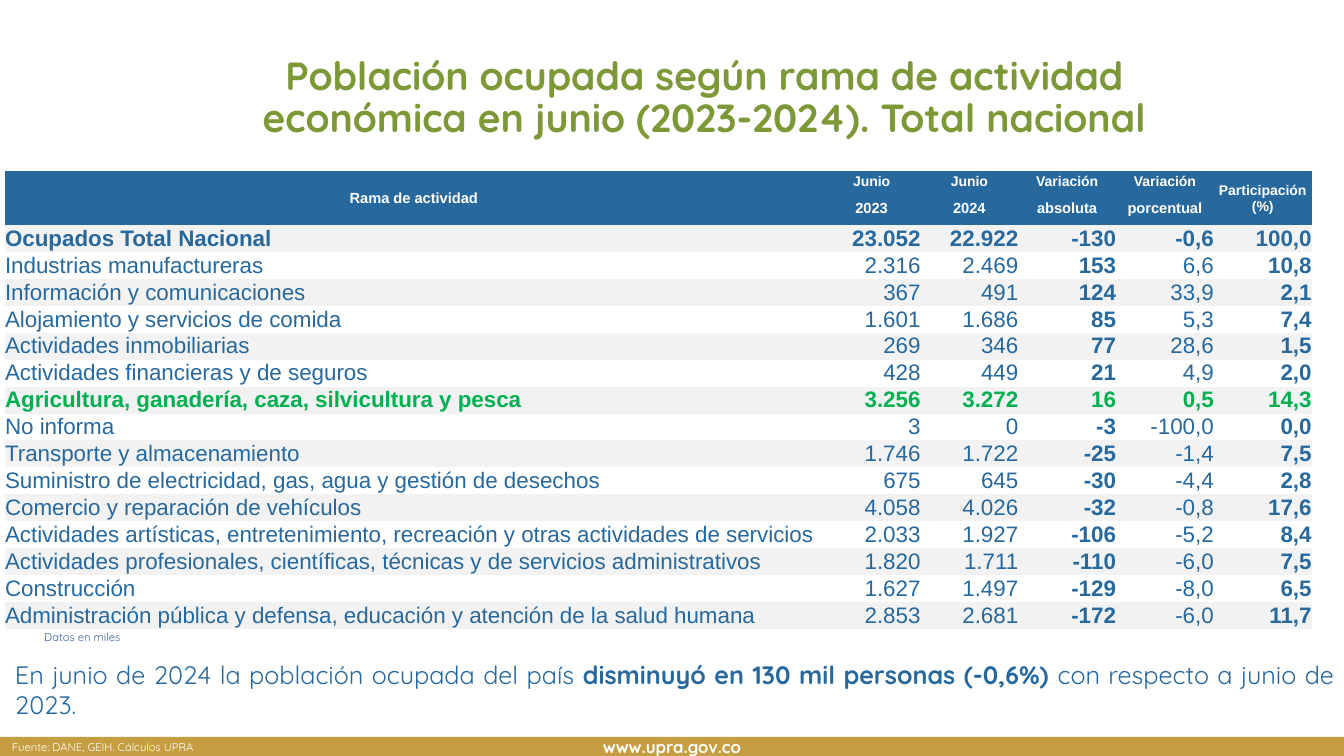
from pptx import Presentation
from pptx.dml.color import RGBColor
from pptx.enum.shapes import MSO_SHAPE
from pptx.enum.text import MSO_ANCHOR, PP_ALIGN
from pptx.util import Inches, Pt

BLUE = RGBColor(0x27, 0x68, 0x9D)
NAVY = RGBColor(0x39, 0x5F, 0x9B)
OLIVE = RGBColor(0x7D, 0x98, 0x37)
GREEN = RGBColor(0x00, 0xB0, 0x50)
GOLD = RGBColor(0xC5, 0x9E, 0x41)
GRAY = RGBColor(0xF2, 0xF2, 0xF2)
WHITE = RGBColor(0xFF, 0xFF, 0xFF)
PLAIN = "{2D5ABB26-0587-4C30-8999-92F81FD0307C}"

# Column heads: upper and lower row
HEADS = [
    ("Rama de actividad", None),
    ("Junio", "2023"),
    ("Junio", "2024"),
    ("Variación", "absoluta"),
    ("Variación", "porcentual"),
    ("Participación (%)", None),
]
TOTAL = "Ocupados Total Nacional"
FARM = "Agricultura, ganadería, caza, silvicultura y pesca"
ROWS = [
    (TOTAL, "23.052", "22.922", "-130", "-0,6", "100,0"),
    ("Industrias manufactureras", "2.316", "2.469", "153", "6,6", "10,8"),
    ("Información y comunicaciones", "367", "491", "124", "33,9", "2,1"),
    ("Alojamiento y servicios de comida", "1.601", "1.686", "85", "5,3", "7,4"),
    ("Actividades inmobiliarias", "269", "346", "77", "28,6", "1,5"),
    ("Actividades financieras y de seguros", "428", "449", "21", "4,9", "2,0"),
    (FARM, "3.256", "3.272", "16", "0,5", "14,3"),
    ("No informa", "3", "0", "-3", "-100,0", "0,0"),
    ("Transporte y almacenamiento", "1.746", "1.722", "-25", "-1,4", "7,5"),
    ("Suministro de electricidad, gas, agua y gestión de desechos",
     "675", "645", "-30", "-4,4", "2,8"),
    ("Comercio y reparación de vehículos",
     "4.058", "4.026", "-32", "-0,8", "17,6"),
    ("Actividades artísticas, entretenimiento, recreación y otras "
     "actividades de servicios", "2.033", "1.927", "-106", "-5,2", "8,4"),
    ("Actividades profesionales, científicas, técnicas y de servicios "
     "administrativos", "1.820", "1.711", "-110", "-6,0", "7,5"),
    ("Construcción", "1.627", "1.497", "-129", "-8,0", "6,5"),
    ("Administración pública y defensa, educación y atención de la salud "
     "humana", "2.853", "2.681", "-172", "-6,0", "11,7"),
]


class Deck:
    face = "Quicksand"
    grid = "Arial"

    def __init__(self):
        self.prs = Presentation()
        self.prs.slide_width = Inches(13.33)
        self.prs.slide_height = Inches(7.5)
        self.slide = self.prs.slides.add_slide(self.prs.slide_layouts[6])

    def style(self, para, size, color, align, bold=None, face=None):
        para.alignment = align
        font = para.font
        font.name = face or self.face
        font.size = Pt(size)
        font.color.rgb = color
        font.bold = bold

    def text(self, box, parts, size, color, align=PP_ALIGN.JUSTIFY):
        """Add a text box; parts are (text, bold) pairs."""
        shape = self.slide.shapes.add_textbox(*map(Inches, box))
        shape.text_frame.word_wrap = True
        para = shape.text_frame.paragraphs[0]
        for words, bold in parts:
            run = para.add_run()
            run.text = words
            run.font.bold = bold
        self.style(para, size, color, align)
        return para

    def bar(self, box, words, size, fill, color):
        shape = self.slide.shapes.add_shape(
            MSO_SHAPE.RECTANGLE, *map(Inches, box))
        shape.shadow.inherit = False
        shape.fill.solid()
        shape.fill.fore_color.rgb = fill
        shape.line.fill.background()
        frame = shape.text_frame
        frame.vertical_anchor = MSO_ANCHOR.MIDDLE
        frame.text = words
        self.style(frame.paragraphs[0], size, color, PP_ALIGN.CENTER, True)

    def cell(self, cell, words, size, color, align, bold, fill, inset=0):
        cell.vertical_anchor = MSO_ANCHOR.MIDDLE
        cell.margin_left = cell.margin_right = cell.margin_top = Inches(inset)
        cell.margin_bottom = 0
        if fill is None:
            cell.fill.background()
        else:
            cell.fill.solid()
            cell.fill.fore_color.rgb = fill
        cell.text = words
        self.style(cell.text_frame.paragraphs[0], size, color, align, bold,
                   self.grid)

    def table(self, box, widths, heights):
        table = self.slide.shapes.add_table(
            len(heights), len(widths), *map(Inches, box)).table
        table.first_row = table.horz_banding = False
        table._tbl.tblPr[0].text = PLAIN
        for col, width in zip(table.columns, widths):
            col.width = Inches(width)
        for row, height in zip(table.rows, heights):
            row.height = Inches(height)
        return table


def main():
    deck = Deck()

    # Footer bar and title
    deck.bar((0, 7.31, 13.33, 0.19), "www.upra.gov.co", 12, GOLD, WHITE)
    title = deck.text(
        (2.03, 0.51, 9.91, 1.19),
        [("Población ocupada según rama de actividad económica en junio "
          "(2023-2024). Total nacional", True)],
        28, OLIVE, PP_ALIGN.CENTER)
    title.line_spacing = 0.9

    # Message and notes
    deck.text(
        (0.05, 6.49, 13.28, 0.71),
        [("En junio de 2024 la población ocupada del país ", False),
         ("disminuyó en 130 mil personas (-0,6%) ", True),
         ("con respecto a junio de 2023.", False)], 18, BLUE)
    deck.text((0.02, 7.3, 12.91, 0.24),
              [("Fuente: DANE, GEIH. Cálculos UPRA", False)], 8, WHITE)
    deck.text((0.34, 6.2, 12.91, 0.24), [("Datos en miles", False)], 8, NAVY)

    # Table head
    table = deck.table((0.05, 1.7, 12.96, 4.53), [8.11] + [0.97] * 5,
                       [0.19, 0.34] + [4 / len(ROWS)] * len(ROWS))
    for col, (upper, lower) in enumerate(HEADS):
        top, low = table.cell(0, col), table.cell(1, col)
        if lower is None:
            top.merge(low)
        else:
            deck.cell(low, lower, 10.5, WHITE, PP_ALIGN.CENTER, True, BLUE,
                      0.01)
        deck.cell(top, upper, 10 if col else 10.5, WHITE, PP_ALIGN.CENTER,
                  True, BLUE, 0.01)

    # Table body
    for num, row in enumerate(ROWS):
        color = GREEN if row[0] == FARM else BLUE
        fill = None if num % 2 else GRAY
        for col, words in enumerate(row):
            bold = row[0] in (TOTAL, FARM) or col in (3, 5)
            align = PP_ALIGN.RIGHT if col else PP_ALIGN.LEFT
            deck.cell(table.cell(num + 2, col), words, 16, color, align, bold,
                      fill)

    deck.prs.save("out.pptx")


if __name__ == "__main__":
    main()
